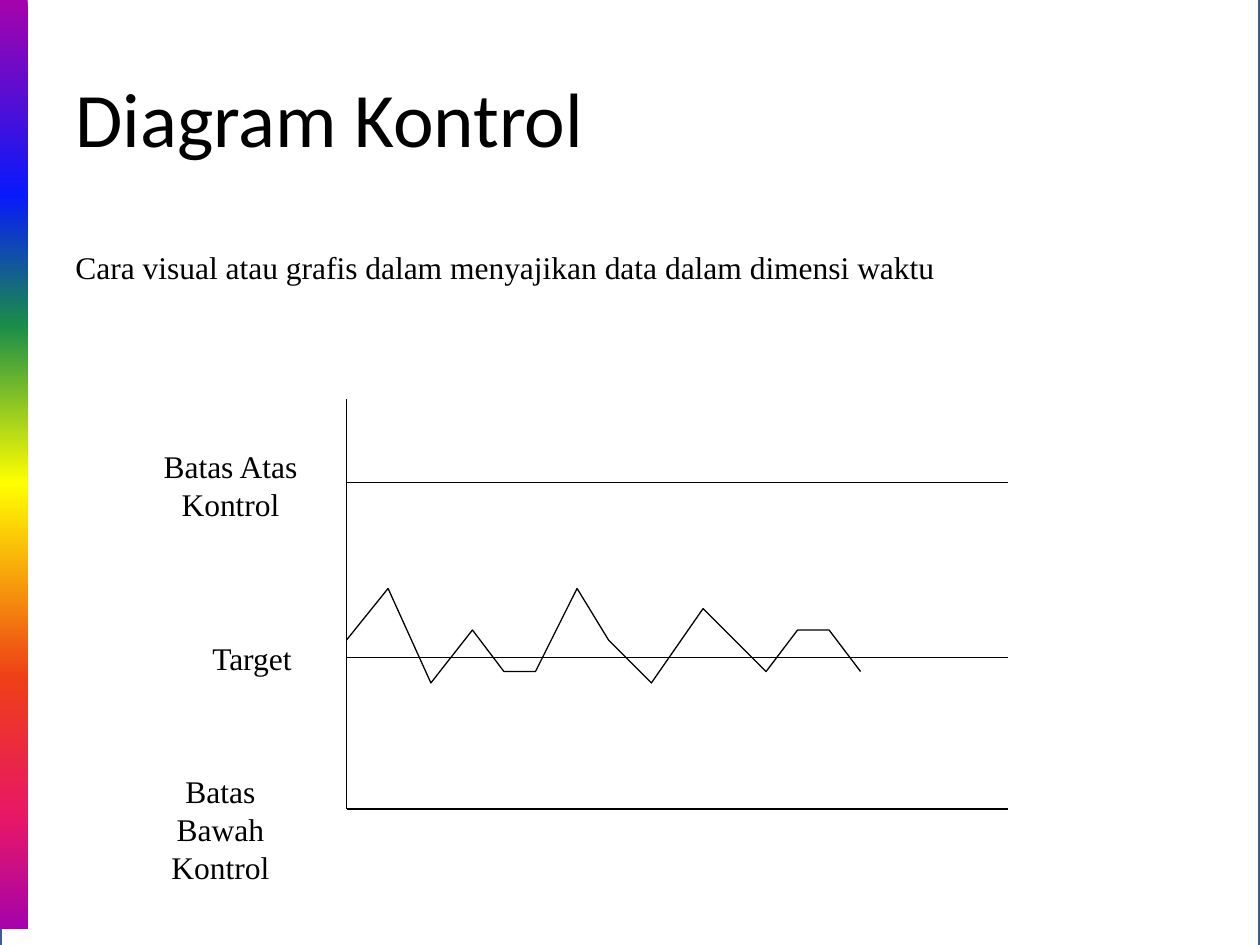
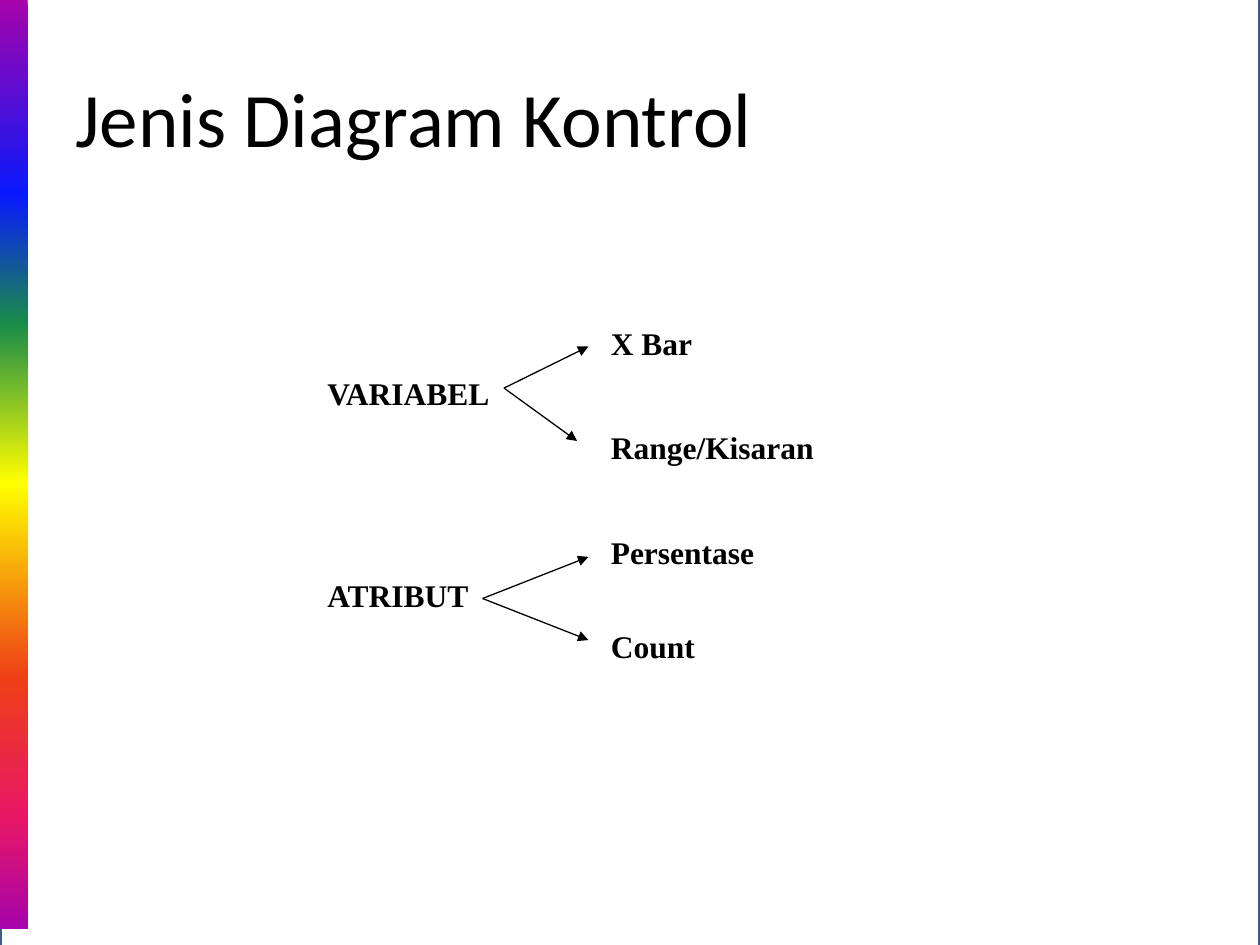
from lxml import etree
from pptx import Presentation
from pptx.dml.color import RGBColor
from pptx.enum.shapes import MSO_CONNECTOR, MSO_SHAPE
from pptx.enum.text import MSO_ANCHOR, MSO_AUTO_SIZE, PP_ALIGN
from pptx.oxml.ns import qn
from pptx.util import Inches, Pt

RECT = MSO_SHAPE.RECTANGLE
STRAIGHT = MSO_CONNECTOR.STRAIGHT
LEFT, CENTER = PP_ALIGN.LEFT, PP_ALIGN.CENTER
TOP, MIDDLE = MSO_ANCHOR.TOP, MSO_ANCHOR.MIDDLE
GROW = MSO_AUTO_SIZE.SHAPE_TO_FIT_TEXT

BLACK = RGBColor(0x00, 0x00, 0x00)
WHITE = RGBColor(0xFF, 0xFF, 0xFF)
FRAME_BLUE = RGBColor(0x3A, 0x5F, 0x8C)
RAINBOW = [
    (0, RGBColor(0xA6, 0x03, 0xAB)),
    (21, RGBColor(0x08, 0x19, 0xFB)),
    (35, RGBColor(0x1A, 0x8D, 0x48)),
    (52, RGBColor(0xFF, 0xFF, 0x00)),
    (73, RGBColor(0xEE, 0x3F, 0x17)),
    (88, RGBColor(0xE8, 0x17, 0x66)),
    (100, RGBColor(0xA6, 0x03, 0xAB)),
]
TITLE_FONT = "Calibri"
BODY_FONT = "Times New Roman"
THIN = Pt(0.75)


def add_rect(slide, x, y, w, h):
    sp = slide.shapes.add_shape(RECT, Inches(x), Inches(y), Inches(w), Inches(h))
    sp.shadow.inherit = False
    return sp


def fill_rainbow(sp):
    """Vertical gradient through all the rainbow stops."""
    sp.fill.gradient()
    grad = sp._element.spPr.find(qn("a:gradFill"))
    stops = grad.find(qn("a:gsLst"))
    for old in list(stops):
        stops.remove(old)
    for percent, color in RAINBOW:
        gs = etree.SubElement(stops, qn("a:gs"), pos=str(percent * 1000))
        etree.SubElement(gs, qn("a:srgbClr"), val=str(color))
    lin = grad.find(qn("a:lin"))
    lin.set("ang", "5400000")
    lin.set("scaled", "0")


def add_text(slide, text, x, y, w, h=0.4, size=18, font=BODY_FONT,
             bold=False, align=LEFT, anchor=TOP, autosize=GROW):
    box = slide.shapes.add_textbox(Inches(x), Inches(y), Inches(w), Inches(h))
    tf = box.text_frame
    tf.word_wrap = True
    tf.auto_size = autosize
    tf.vertical_anchor = anchor
    p = tf.paragraphs[0]
    p.alignment = align
    r = p.add_run()
    r.text = text
    r.font.name = font
    r.font.size = Pt(size)
    r.font.bold = bold
    r.font.color.rgb = BLACK


def add_line(slide, start, end, arrow=False):
    points = [Inches(v) for v in (*start, *end)]
    cxn = slide.shapes.add_connector(STRAIGHT, *points)
    cxn.line.color.rgb = BLACK
    cxn.line.width = THIN
    if arrow:
        etree.SubElement(cxn.line._get_or_add_ln(), qn("a:tailEnd"), type="triangle")
    etree.SubElement(cxn._element.spPr, qn("a:effectLst"))


def add_polyline(slide, points):
    start, *rest = [(Inches(x), Inches(y)) for x, y in points]
    builder = slide.shapes.build_freeform(*start)
    builder.add_line_segments(rest, close=False)
    sp = builder.convert_to_shape()
    sp.shadow.inherit = False
    sp.fill.background()
    sp.line.color.rgb = BLACK
    sp.line.width = THIN


def new_slide(prs, title):
    """Blank slide with the shared frame, rainbow band and title."""
    slide = prs.slides.add_slide(prs.slide_layouts[6])
    frame = add_rect(slide, 0, -0.11, 10, 7.8)
    frame.fill.solid()
    frame.fill.fore_color.rgb = WHITE
    color = frame._element.spPr.find(qn("a:solidFill"))[0]
    etree.SubElement(color, qn("a:alpha"), val="96000")
    frame.line.color.rgb = FRAME_BLUE
    frame.line.width = Pt(2)

    band = add_rect(slide, 0, 0, 0.22, 7.37)
    fill_rainbow(band)
    band.line.fill.background()

    add_text(slide, title, 0.5, 0.3, 9, 1.25, size=44, font=TITLE_FONT,
             anchor=MIDDLE, autosize=MSO_AUTO_SIZE.NONE)
    return slide


def control_chart_slide(prs):
    slide = new_slide(prs, "Diagram Kontrol")
    add_text(slide, "Cara visual atau grafis dalam menyajikan data dalam dimensi waktu",
             0.5, 1.92, 7.58)

    # Vertical axis and the three control levels
    axis_x, right, upper, target, lower = 2.75, 8, 3.83, 5.22, 6.42
    add_line(slide, (axis_x, 3.17), (axis_x, lower))
    for level in (lower, upper, target):
        add_line(slide, (axis_x, level), (right, level))

    # Measurements over time
    add_polyline(slide, [
        (axis_x, 5.08), (3.08, 4.67), (3.42, 5.42), (3.75, 5), (4, 5.33),
        (4.25, 5.33), (4.58, 4.67), (4.83, 5.08), (5.17, 5.42), (5.58, 4.83),
        (6.08, 5.33), (6.33, 5), (6.58, 5), (6.83, 5.33)])

    # Level labels
    for text, x, y, w, h in [
            ("Batas Bawah Kontrol", 1, 6.08, 1.5, 1),
            ("Batas Atas Kontrol", 1.08, 3.5, 1.5, 0.7),
            ("Target", 1.5, 5.02, 1, 0.4)]:
        add_text(slide, text, x, y, w, h, align=CENTER)


def chart_types_slide(prs):
    slide = new_slide(prs, "Jenis Diagram Kontrol")
    # Family, its top, arrow origin, then (type, top, arrow tip) per branch
    families = [
        ("VARIABEL", 2.92, (4, 3.08),
         [("X Bar", 2.52, (4.67, 2.75)), ("Range/Kisaran", 3.35, (4.58, 3.5))]),
        ("ATRIBUT", 4.52, (3.83, 4.75),
         [("Persentase", 4.18, (4.67, 4.42)), ("Count", 4.93, (4.67, 5.08))]),
    ]
    for family, top, origin, branches in families:
        add_text(slide, family, 2.5, top, 1.67, bold=True)
        for name, name_top, tip in branches:
            add_text(slide, name, 4.75, name_top, 2, bold=True)
            add_line(slide, origin, tip, arrow=True)


def main():
    prs = Presentation()
    prs.slide_width, prs.slide_height = Inches(10), Inches(7.5)
    control_chart_slide(prs)
    chart_types_slide(prs)
    prs.save("out.pptx")


if __name__ == "__main__":
    main()
